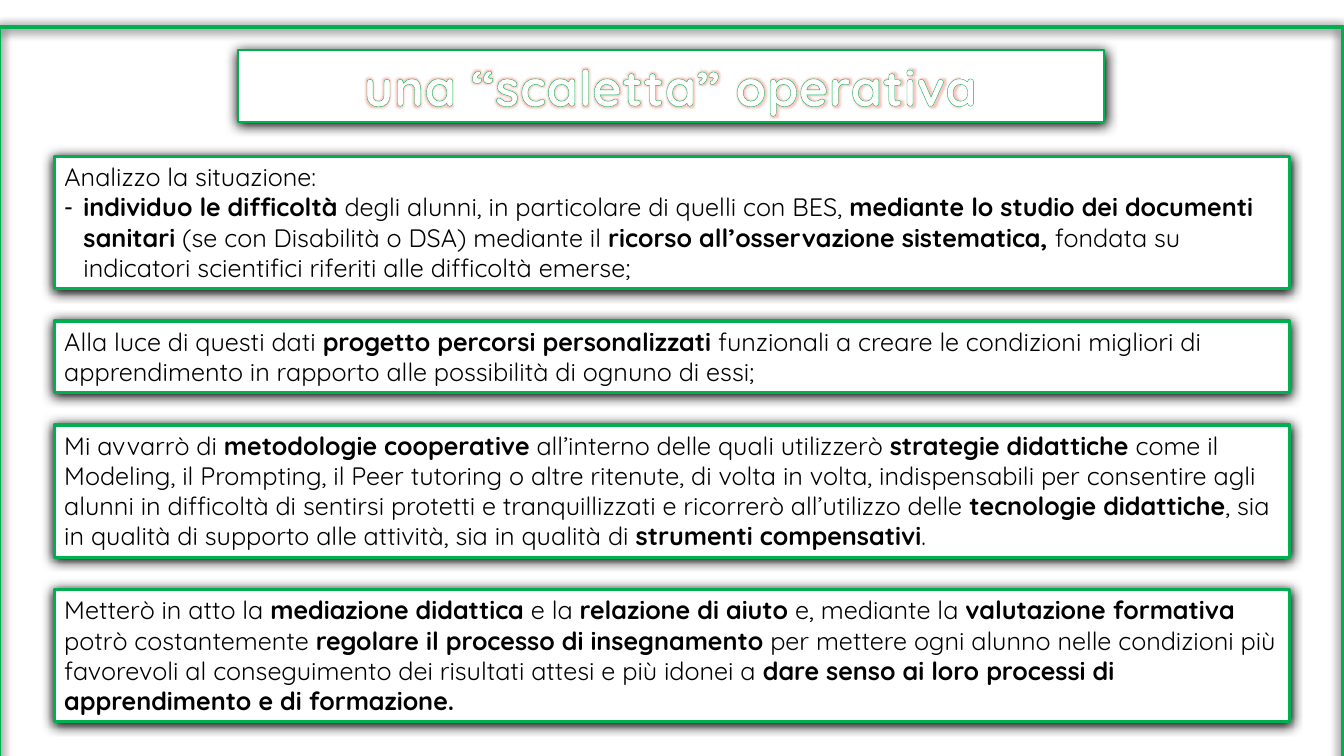
from lxml import etree
from pptx import Presentation
from pptx.dml.color import RGBColor
from pptx.enum.shapes import MSO_SHAPE
from pptx.enum.text import MSO_ANCHOR as Anchor, MSO_AUTO_SIZE as AutoSize, PP_ALIGN as Align
from pptx.oxml.ns import qn
from pptx.util import Cm, Pt

COLORS = {"green": "00B050", "white": "FFFFFF", "black": "000000", "coral": "E8604C"}
FONT = "Quicksand"
LEFT, WIDTH, GAP = 1.37, 31.12, 0.82
FIRST_TOP = 3.94
HANGING = 0.48

# Asterisks enclose the bold words; a leading "- " marks a list item.
STEPS = [
    (3.33, ["Analizzo la situazione:",
            "- *individuo le difficoltà* degli alunni, in particolare di quelli con BES, "
            "*mediante lo studio dei documenti sanitari* (se con Disabilità o DSA) mediante il "
            "*ricorso all’osservazione sistematica,* fondata su indicatori scientifici "
            "riferiti alle difficoltà emerse;"]),
    (1.8, ["Alla luce di questi dati *progetto percorsi personalizzati* funzionali a creare "
           "le condizioni migliori di apprendimento in rapporto alle possibilità di ognuno "
           "di essi;"]),
    (3.33, ["Mi avvarrò di *metodologie cooperative* all’interno delle quali utilizzerò "
            "*strategie didattiche* come il Modeling, il Prompting, il Peer tutoring o altre "
            "ritenute, di volta in volta, indispensabili per consentire agli alunni in "
            "difficoltà di sentirsi protetti e tranquillizzati e ricorrerò all’utilizzo "
            "delle *tecnologie didattiche*, sia in qualità di supporto alle attività, sia in "
            "qualità di *strumenti compensativi*."]),
    (3.33, ["Metterò in atto la *mediazione didattica* e la *relazione di aiuto* e, mediante "
            "la *valutazione formativa* potrò costantemente *regolare il processo di "
            "insegnamento* per mettere ogni alunno nelle condizioni più favorevoli al "
            "conseguimento dei risultati attesi e più idonei a *dare senso ai loro processi "
            "di apprendimento e di formazione.*"]),
]


def rgb(name):
    return RGBColor.from_string(COLORS[name])


def add_color(parent, name):
    return etree.SubElement(parent, qn("a:srgbClr"), val=COLORS[name])


def write(para, text, size=18, color="black", bold=False):
    span = para.add_run()
    span.text = text
    font = span.font
    font.name, font.size, font.bold = FONT, Pt(size), bold
    font.color.rgb = rgb(color)
    return span


class SlideBuilder:
    def __init__(self, deck):
        self.slide = deck.slides.add_slide(deck.slide_layouts[1])
        self.shapes = self.slide.shapes

    def style(self, shape, line_width, filled=True):
        """Give a shape the green border and the soft shadow below it."""
        if filled:
            shape.fill.solid()
            shape.fill.fore_color.rgb = rgb("white")
        else:
            shape.fill.background()
        shape.line.color.rgb = rgb("green")
        shape.line.width = Pt(line_width)
        properties = shape._element.spPr
        effects = properties.find(qn("a:effectLst"))
        if effects is None:
            effects = etree.SubElement(properties, qn("a:effectLst"))
        shadow = etree.SubElement(effects, qn("a:outerShdw"), blurRad=str(Pt(8.5)),
                                  dist=str(Pt(1)), dir="5400000", rotWithShape="0")
        add_color(shadow, "black")

    def place(self, shape, left, top, width, height):
        shape.left, shape.top = Cm(left), Cm(top)
        shape.width, shape.height = Cm(width), Cm(height)

    def frame(self, left, top, width, height):
        shape = self.shapes.add_shape(MSO_SHAPE.RECTANGLE, Cm(left), Cm(top),
                                      Cm(width), Cm(height))
        shape.shadow.inherit = False
        self.style(shape, 3, filled=False)

    def title(self, text, *bounds):
        box = self.shapes.title
        self.place(box, *bounds)
        self.style(box, 1.5)
        box.text_frame.auto_size = AutoSize.NONE
        box.text_frame.vertical_anchor = Anchor.MIDDLE
        para = box.text_frame.paragraphs[0]
        para.alignment = Align.CENTER
        self.outline(write(para, text, size=36, color="white", bold=True))

    def outline(self, span):
        """Draw the letters with a thin green edge and a faint coral glow."""
        run_format = span._r.get_or_add_rPr()
        run_format.set("spc", "50")
        edge = etree.Element(qn("a:ln"), w=str(Pt(0.75)))
        add_color(etree.SubElement(edge, qn("a:solidFill")), "green")
        run_format.insert(0, edge)
        effects = etree.Element(qn("a:effectLst"))
        glow = etree.SubElement(effects, qn("a:glow"), rad=str(Pt(3.5)))
        etree.SubElement(add_color(glow, "coral"), qn("a:alpha"), val="35000")
        run_format.find(qn("a:solidFill")).addnext(effects)

    def step(self, box, paragraphs, *bounds):
        self.place(box, *bounds)
        self.style(box, 2.25)
        frame = box.text_frame
        frame.word_wrap = True
        frame.auto_size = AutoSize.NONE
        frame.vertical_anchor = Anchor.TOP
        for index, text in enumerate(paragraphs):
            para = frame.add_paragraph() if index else frame.paragraphs[0]
            self.bullet(para, text.startswith("- "))
            para.space_before = Pt(0)
            para.alignment = Align.LEFT
            for part, words in enumerate(text.removeprefix("- ").split("*")):
                if words:
                    write(para, words, bold=part % 2 == 1)

    def bullet(self, para, listed):
        indent = Cm(HANGING) if listed else 0
        layout = para._p.get_or_add_pPr()
        layout.set("marL", str(indent))
        layout.set("indent", str(-indent))
        if listed:
            etree.SubElement(layout, qn("a:buChar"), char="-")
        else:
            etree.SubElement(layout, qn("a:buNone"))


def main():
    deck = Presentation()
    deck.slide_width, deck.slide_height = Cm(33.87), Cm(19.05)
    builder = SlideBuilder(deck)
    builder.frame(-0.03, 0.69, 33.87, 19.05)
    builder.title("una “scaletta” operativa", 5.99, 1.27, 21.84, 1.8)
    top = FIRST_TOP
    for index, (height, paragraphs) in enumerate(STEPS):
        if index:
            box = builder.shapes.add_textbox(0, 0, 0, 0)
        else:
            box = builder.slide.placeholders[1]
        builder.step(box, paragraphs, LEFT, top, WIDTH, height)
        top += height + GAP
    deck.save("out.pptx")


if __name__ == "__main__":
    main()
